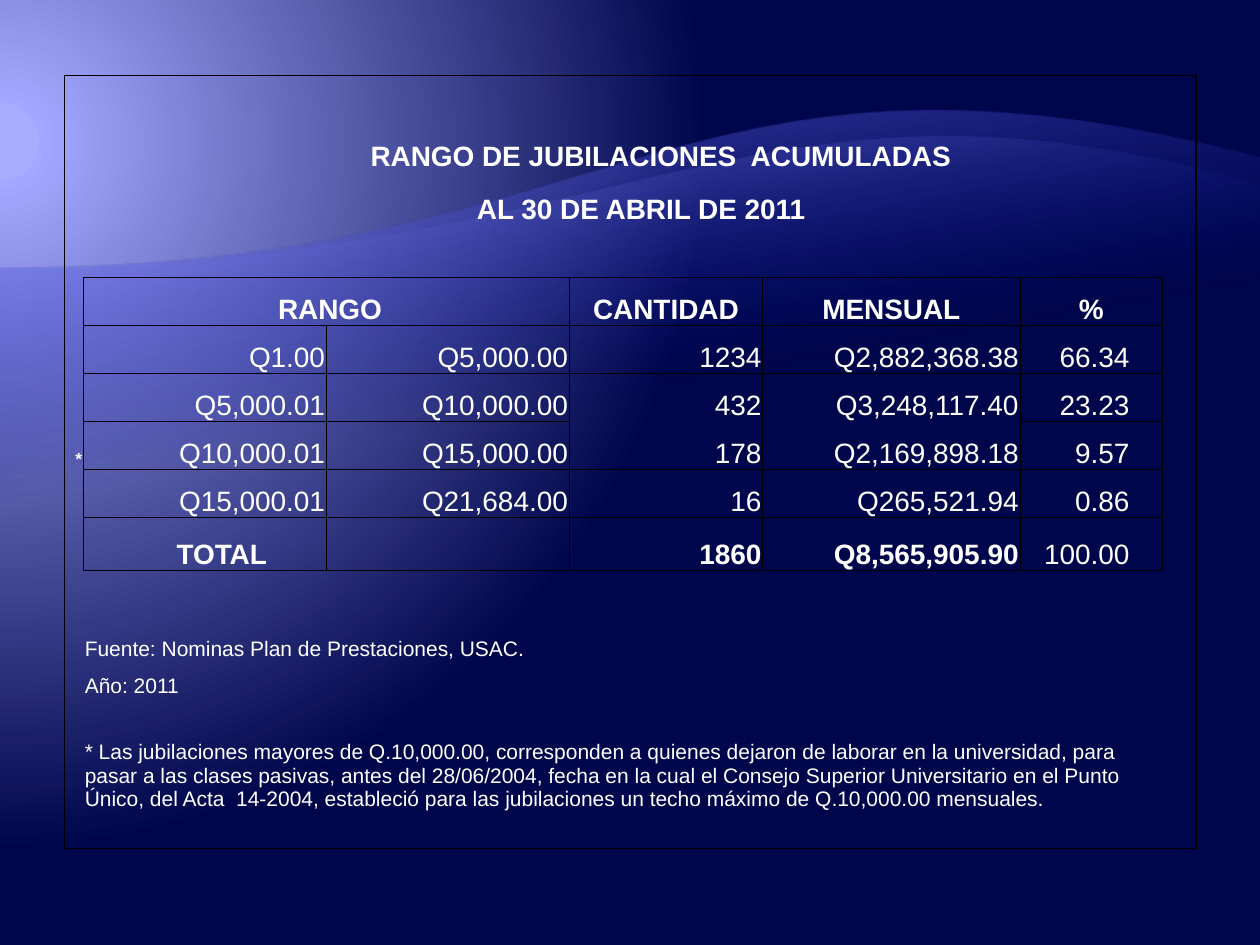
from pptx import Presentation
from pptx.dml.color import RGBColor as Rgb
from pptx.enum.text import MSO_ANCHOR as Anchor, PP_ALIGN as Align
from pptx.oxml import parse_xml
from pptx.oxml.ns import nsdecls, qn
from pptx.util import Pt

SIZE = (720, 540)
COLUMNS = [10.8, 138.8, 138.8, 110.6, 147, 81.6, 18.9]
ROWS = [21.6, 33.8, 30.2, 30.2] + [27.4] * 5 + [30.2] * 2 + [21.5] * 6
GRID_TOP, GRID_BOTTOM = 4, 9
GRID_LEFT, GRID_RIGHT = 1, 5
MERGES = [(1, 1, 1, 5), (2, 1, 2, 5), (4, 1, 4, 2), (11, 1, 11, 2), (13, 1, 15, 5)]
INSETS = {"margin_left": Pt(0.75), "margin_right": Pt(0.75),
          "margin_top": Pt(0.75), "margin_bottom": Pt(0)}
PERCENT = {"margin_right": Pt(19)}

HEADERS = ["RANGO", None, "CANTIDAD", "MENSUAL", "%"]
RANGES = [
    ["Q1.00", "Q5,000.00", "1234", "Q2,882,368.38", "66.34"],
    ["Q5,000.01", "Q10,000.00", "432", "Q3,248,117.40", "23.23"],
    ["Q10,000.01", "Q15,000.00", "178", "Q2,169,898.18", "9.57"],
    ["Q15,000.01", "Q21,684.00", "16", "Q265,521.94", "0.86"],
]
TOTALS = [None, "1860", "Q8,565,905.90", "100.00"]
FOOTNOTE = (
    "* Las jubilaciones mayores de Q.10,000.00, corresponden a quienes dejaron de "
    "laborar en la universidad, para pasar a las clases pasivas, antes del 28/06/2004, "
    "fecha en la cual el Consejo Superior Universitario en el Punto Único, del Acta  "
    "14-2004, estableció para las jubilaciones un techo máximo de Q.10,000.00 mensuales."
)


def color(hex_value):
    return Rgb.from_string(hex_value)


def set_all(target, values):
    for name, value in values.items():
        setattr(target, name, value)


def gradient(stops, direction):
    marks = "".join(
        f'<a:gs pos="{pos * 1000}"><a:srgbClr val="{color(shade)}">'
        f'<a:alpha val="{opacity * 1000}"/></a:srgbClr></a:gs>'
        for pos, shade, opacity in stops)
    return parse_xml(f'<a:gradFill {nsdecls("a")} rotWithShape="1">'
                     f'<a:gsLst>{marks}</a:gsLst>{direction}</a:gradFill>')


def paint_background(slide):
    slide.background.fill.solid()
    plain = slide.element.find(".//" + qn("a:solidFill"))
    glow = gradient(
        [(5, "A8ACFF", 100), (5, "A3A7FF", 100), (90, "00064B", 100)],
        '<a:path path="circle"><a:fillToRect l="20000" t="30000" '
        'r="135000" b="100000"/></a:path>')
    plain.getparent().replace(plain, glow)


def add_wave(slide, crest, base, controls, light, opacity):
    width, shoulder = SIZE[0], 153.4
    builder = slide.shapes.build_freeform(Pt(width), Pt(base))
    builder.add_line_segments(
        [(Pt(x), Pt(y)) for x, y in [(0, base), (0, shoulder), (width, crest)]])
    wave = builder.convert_to_shape()
    wave.shadow.inherit = False
    wave.line.fill.background()

    points = "".join(f'<a:pt x="{Pt(x)}" y="{Pt(y - crest)}"/>'
                     for x, y in [*controls, (width, crest)])
    curve = parse_xml(f'<a:cubicBezTo {nsdecls("a")}>{points}</a:cubicBezTo>')
    edge = wave.element.findall(".//" + qn("a:lnTo"))[2]
    edge.getparent().replace(edge, curve)

    wave.fill.solid()
    plain = wave.element.spPr.find(qn("a:solidFill"))
    plain.getparent().replace(plain, gradient(
        [(65, "000D9E", 0), (100, light, opacity)],
        f'<a:lin ang="{260 * 60000}" scaled="0"/>'))


def write(cell, text, align=Align.LEFT, size=16, bold=False, insets=None):
    set_all(cell, {**INSETS, **(insets or {}), "vertical_anchor": Anchor.BOTTOM})
    paragraph = cell.text_frame.paragraphs[0]
    paragraph.alignment = align
    run = paragraph.add_run()
    run.text = text
    set_all(run.font, {"name": "Arial", "size": Pt(size), "bold": bold})
    run.font.color.rgb = color("FFFFFF")


def horizontal_width(line, col):
    if line in (0, len(ROWS)):
        return 1
    open_gap = line == 7 and col in (3, 4)
    in_grid = GRID_TOP <= line <= GRID_BOTTOM + 1 and GRID_LEFT <= col <= GRID_RIGHT
    return 0.5 if in_grid and not open_gap else 0


def vertical_width(line, row):
    if line in (0, len(COLUMNS)):
        return 1
    in_grid = GRID_TOP <= row <= GRID_BOTTOM and GRID_LEFT <= line <= GRID_RIGHT + 1
    return 0.5 if in_grid else 0


def draw_borders(cell, row, col):
    widths = {"lnL": vertical_width(col, row), "lnR": vertical_width(col + 1, row),
              "lnT": horizontal_width(row, col), "lnB": horizontal_width(row + 1, col)}
    properties = cell._tc.get_or_add_tcPr()
    for place, (side, width) in enumerate(widths.items()):
        ink = (f'<a:solidFill><a:srgbClr val="{color("000000")}"/></a:solidFill>'
               if width else "<a:noFill/>")
        properties.insert(place, parse_xml(
            f'<a:{side} {nsdecls("a")} w="{Pt(width)}">{ink}</a:{side}>'))


def add_frame(slide):
    table = slide.shapes.add_table(
        len(ROWS), len(COLUMNS), Pt(36.9), Pt(43), Pt(sum(COLUMNS)), Pt(sum(ROWS))).table
    set_all(table, {"first_row": False, "horz_banding": False})
    for column, width in zip(table.columns, COLUMNS):
        column.width = Pt(width)
    for line, height in zip(table.rows, ROWS):
        line.height = Pt(height)
    for top, left, bottom, right in MERGES:
        table.cell(top, left).merge(table.cell(bottom, right))
    for row in range(len(ROWS)):
        for col in range(len(COLUMNS)):
            cell = table.cell(row, col)
            cell.fill.background()
            set_all(cell, INSETS)
            draw_borders(cell, row, col)
    return table


def fill_ranges(table):
    for col, header in enumerate(HEADERS, GRID_LEFT):
        if header:
            shift = {"margin_left": Pt(5)} if header == "RANGO" else None
            write(table.cell(GRID_TOP, col), header, Align.CENTER, bold=True, insets=shift)
    for row, values in enumerate(RANGES, GRID_TOP + 1):
        for col, value in enumerate(values, GRID_LEFT):
            write(table.cell(row, col), value, Align.RIGHT,
                  insets=PERCENT if col == GRID_RIGHT else None)
    write(table.cell(7, 0), "*", Align.RIGHT, 10, True)
    write(table.cell(GRID_BOTTOM, GRID_LEFT), "TOTAL", Align.CENTER, bold=True,
          insets={"margin_left": Pt(20)})
    for col, value in enumerate(TOTALS, GRID_LEFT + 1):
        if value:
            is_percent = col == GRID_RIGHT
            write(table.cell(GRID_BOTTOM, col), value, Align.RIGHT, bold=not is_percent,
                  insets=PERCENT if is_percent else None)


def shrink_empty(table):
    for cell in table.iter_cells():
        if not cell.text_frame.text:
            cell.text_frame.paragraphs[0]._p.append(
                parse_xml(f'<a:endParaRPr {nsdecls("a")} sz="1200"/>'))


def main():
    deck = Presentation()
    deck.slide_width, deck.slide_height = map(Pt, SIZE)
    slide = deck.slides.add_slide(deck.slide_layouts[6])
    paint_background(slide)
    add_wave(slide, 90, 527.8, [(360, 153.4), (384.5, 3.6)], "797FFF", 55)
    add_wave(slide, 105.8, 458.6, [(360, 153.4), (430.6, 22.3)], "A3A7FF", 30)

    table = add_frame(slide)
    titles = [("RANGO DE JUBILACIONES  ACUMULADAS", 44), ("AL 30 DE ABRIL DE 2011", 21.5)]
    for row, (title, shift) in enumerate(titles, 1):
        write(table.cell(row, 1), title, Align.CENTER, bold=True,
              insets={"margin_left": Pt(shift)})
    fill_ranges(table)
    notes = ["Fuente: Nominas Plan de Prestaciones, USAC.", "Año: 2011", FOOTNOTE]
    for row, note in enumerate(notes, 11):
        write(table.cell(row, 1), note, size=12)
    shrink_empty(table)
    deck.save("out.pptx")


if __name__ == "__main__":
    main()
